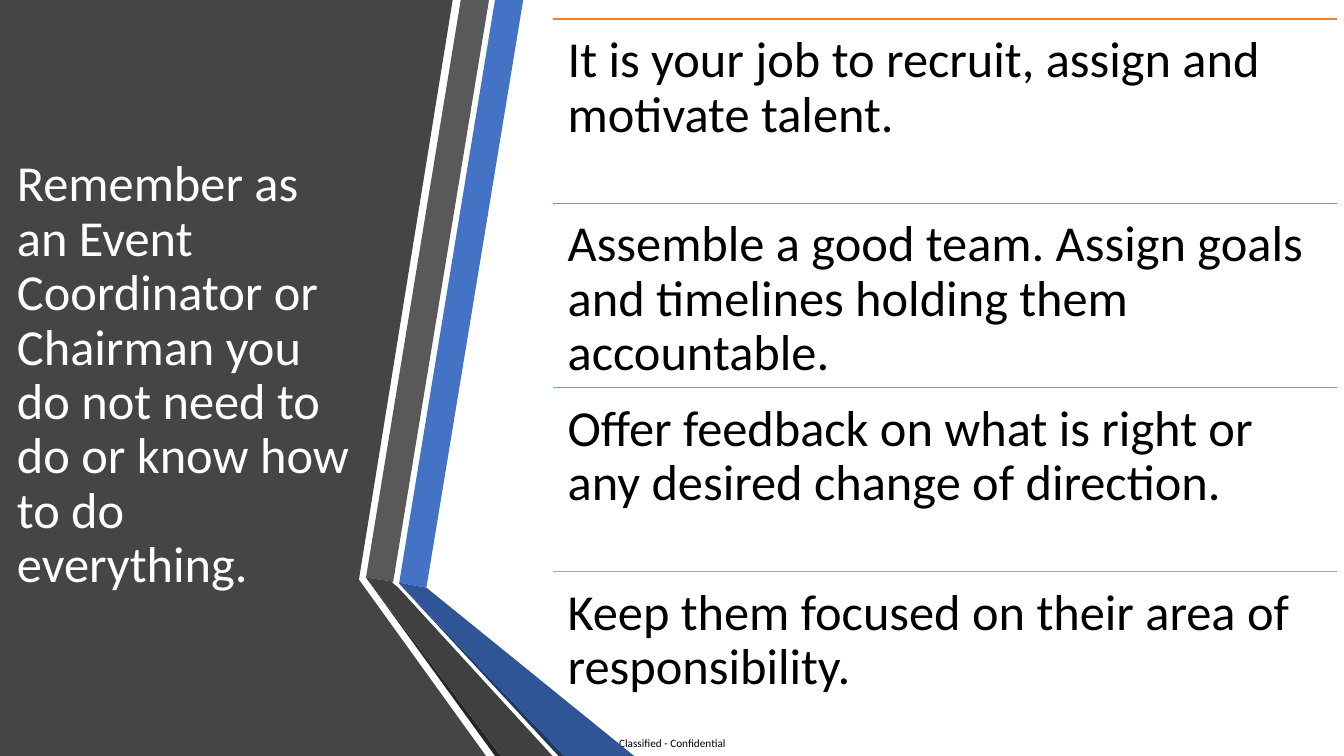
from lxml import etree
from pptx import Presentation
from pptx.dml.color import RGBColor
from pptx.enum.shapes import MSO_CONNECTOR
from pptx.enum.text import MSO_ANCHOR, PP_ALIGN
from pptx.oxml.ns import qn
from pptx.util import Inches, Pt

STRAIGHT = MSO_CONNECTOR.STRAIGHT
TOP, MIDDLE = MSO_ANCHOR.TOP, MSO_ANCHOR.MIDDLE
LEFT, CENTER = PP_ALIGN.LEFT, PP_ALIGN.CENTER

COLORS = {
    "black": "000000", "white": "FFFFFF", "panel": "454545",
    "blue": "4472C4", "blue fold": "2F5597", "blue edge": "203864",
    "gray": "595959", "gray fold": "404040", "gray edge": "262626",
    "rule 1": "ED7D31", "rule 2": "D17B5C", "rule 3": "B98A82", "rule 4": "A5A5A5",
}
FONT = "Calibri"
PAGE_WIDTH, PAGE_HEIGHT = 13.33, 7.5

FOOTER = "Classified - Confidential"
TITLE = ("Remember as an Event Coordinator or Chairman you do not need "
         "to do or know how to do everything.")
DUTIES = [
    ("It is your job to recruit, assign and motivate talent.", "rule 1"),
    ("Assemble a good team. Assign goals and timelines holding them accountable.", "rule 2"),
    ("Offer feedback on what is right or any desired change of direction.", "rule 3"),
    ("Keep them focused on their area of responsibility.", "rule 4"),
]
DUTIES_LEFT, DUTIES_TOP, DUTIES_WIDTH = 5.48, 0.19, 7.78

# Outlines in inches, from back to front
RIBBONS = [
    ("panel", [(0, 0), (3.53, 0), (4.49, 0), (3.56, 5.75), (4.82, 7.5), (0, 7.5)]),
    ("blue", [(3.96, 5.78), (4.23, 5.83), (5.19, 0), (4.91, 0)]),
    ("gray", [(4.85, 0), (4.57, 0), (3.63, 5.73), (3.9, 5.77)]),
    ("gray edge", [(3.63, 5.73), (4.91, 7.5), (4.97, 7.5)]),
    ("blue edge", [(3.96, 5.79), (5.54, 7.5), (5.6, 7.5)]),
    ("blue fold", [(3.96, 5.79), (5.6, 7.5), (6.29, 7.5), (4.23, 5.83), (3.96, 5.78)]),
    ("gray fold", [(5.48, 7.5), (3.95, 5.83), (3.89, 5.78), (3.9, 5.77),
                   (3.63, 5.73), (4.97, 7.5)]),
]


def rgb(name):
    return RGBColor.from_string(COLORS[name])


def add_text(page, text, left, top, width, height, *, size=36, color="black",
             anchor=TOP, align=LEFT, spacing=0.9, insets=(0.1, 0.05)):
    """Add a wrapped text box; insets are (horizontal, vertical) inches."""
    box = page.shapes.add_textbox(Inches(left), Inches(top), Inches(width), Inches(height))
    frame = box.text_frame
    frame.word_wrap = True
    frame.vertical_anchor = anchor
    frame.margin_left = frame.margin_right = Inches(insets[0])
    frame.margin_top = frame.margin_bottom = Inches(insets[1])
    para = frame.paragraphs[0]
    para.alignment = align
    para.line_spacing = spacing
    span = para.add_run()
    span.text = text
    span.font.name = FONT
    span.font.size = Pt(size)
    span.font.color.rgb = rgb(color)


def add_ribbon(page, color, points):
    corners = [(Inches(x), Inches(y)) for x, y in points]
    builder = page.shapes.build_freeform(*corners[0])
    builder.add_line_segments(corners[1:], close=True)
    ribbon = builder.convert_to_shape()
    ribbon.shadow.inherit = False
    ribbon.fill.solid()
    ribbon.fill.fore_color.rgb = rgb(color)
    ribbon.line.fill.background()


def add_rule(page, left, top, width, color):
    rule = page.shapes.add_connector(STRAIGHT, Inches(left), Inches(top),
                                     Inches(left + width), Inches(top))
    rule.line.color.rgb = rgb(color)
    rule.line.width = Pt(1)
    etree.SubElement(rule._element.spPr, qn("a:effectLst"))


def main():
    deck = Presentation()
    deck.slide_width, deck.slide_height = Inches(PAGE_WIDTH), Inches(PAGE_HEIGHT)
    page = deck.slides.add_slide(deck.slide_layouts[6])
    page.background.fill.solid()
    page.background.fill.fore_color.rgb = rgb("white")

    add_text(page, FOOTER, 6, 7.25, 1.34, 0.25, size=8, anchor=MIDDLE,
             align=CENTER, spacing=1.0, insets=(0, 0))
    for color, points in RIBBONS:
        add_ribbon(page, color, points)
    add_text(page, TITLE, 0.07, 0.19, 3.6, 7.08, color="white", anchor=MIDDLE)

    row_height = (PAGE_HEIGHT - DUTIES_TOP) / len(DUTIES)
    for row, (duty, color) in enumerate(DUTIES):
        top = DUTIES_TOP + row * row_height
        add_rule(page, DUTIES_LEFT, top, DUTIES_WIDTH, color)
        add_text(page, duty, DUTIES_LEFT, top, DUTIES_WIDTH, row_height,
                 insets=(0.15, 0.15))

    deck.save("out.pptx")


if __name__ == "__main__":
    main()
